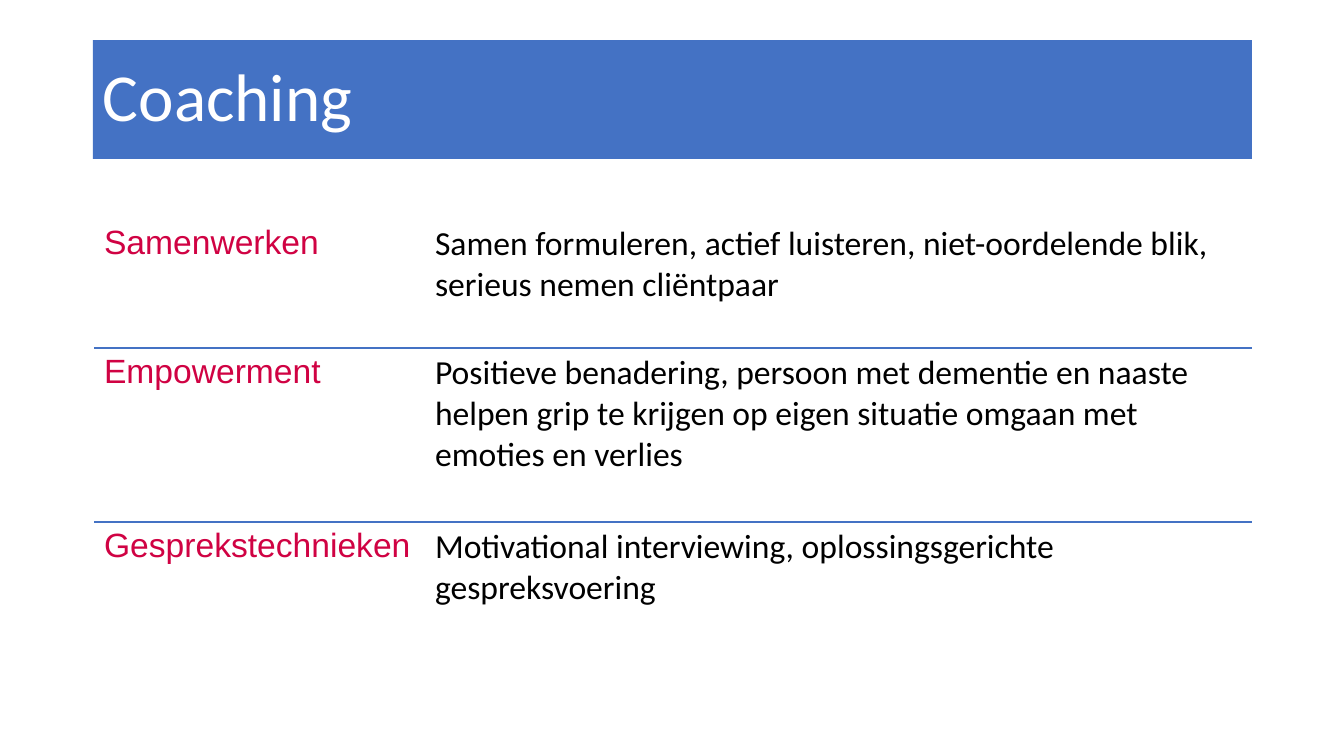
"""Build the slide on coaching: a title bar above a table of three themes."""
import pptx
import pptx.dml.color
import pptx.enum.shapes
import pptx.enum.text
import pptx.oxml
import pptx.oxml.ns
import pptx.util

TITLE = "Coaching"
THEMES = [
    ("Samenwerken",
     "Samen formuleren, actief luisteren, niet-oordelende blik, serieus nemen cliëntpaar"),
    ("Empowerment",
     "Positieve benadering, persoon met dementie en naaste helpen grip te krijgen "
     "op eigen situatie omgaan met emoties en verlies"),
    ("Gesprekstechnieken",
     "Motivational interviewing, oplossingsgerichte gespreksvoering"),
]
BLUE = "4472C4"
TITLE_FORMAT = {"name": "Calibri", "size": pptx.util.Pt(48)}
COLUMN_FORMATS = [
    ({"name": "Arial", "size": pptx.util.Pt(24)}, "D00243"),
    ({"name": "Calibri", "size": pptx.util.Pt(24)}, "000000"),
]

SLIDE_SIZE = (1344, 756)
TITLE_BOX = (93, 40, 1159, 119)
TABLE_LEFT, TABLE_TOP = 94, 219
COLUMN_WIDTHS = [331, 827]
ROW_HEIGHTS = [129, 174, 208]


def px(length):
    return pptx.util.Emu(round(length * 12192000 / 1344))


def color(value):
    return pptx.dml.color.RGBColor.from_string(value)


def write(text_frame, text, font_format, font_color):
    paragraph = text_frame.paragraphs[0]
    run = paragraph.add_run()
    run.text = text
    for name, value in font_format.items():
        setattr(run.font, name, value)
    run.font.color.rgb = color(font_color)
    return paragraph


def set_borders(cell, ruled_sides):
    properties = cell._tc.get_or_add_tcPr()
    for side in "LRTB":
        fill = "<a:noFill/>"
        if side in ruled_sides:
            fill = f'<a:solidFill><a:srgbClr val="{BLUE}"/></a:solidFill>'
        properties.append(pptx.oxml.parse_xml(
            f'<a:ln{side} {pptx.oxml.ns.nsdecls("a")} w="12700">{fill}</a:ln{side}>'))


def add_themes(slide):
    box = (TABLE_LEFT, TABLE_TOP, sum(COLUMN_WIDTHS), sum(ROW_HEIGHTS))
    table = slide.shapes.add_table(
        len(THEMES), len(COLUMN_WIDTHS), *map(px, box)).table
    table.first_row = False
    table.horz_banding = False
    for column, width in zip(table.columns, COLUMN_WIDTHS):
        column.width = px(width)
    for row_index, theme in enumerate(THEMES):
        table.rows[row_index].height = px(ROW_HEIGHTS[row_index])
        ruled_sides = ("T" if row_index > 0 else "") + (
            "B" if row_index < len(THEMES) - 1 else "")
        for column_index, text in enumerate(theme):
            cell = table.cell(row_index, column_index)
            set_borders(cell, ruled_sides)
            cell.fill.background()
            write(cell.text_frame, text, *COLUMN_FORMATS[column_index])


def add_title(slide):
    shape = slide.shapes.add_shape(
        pptx.enum.shapes.MSO_SHAPE.RECTANGLE, *map(px, TITLE_BOX))
    shape.shadow.inherit = False
    shape.fill.solid()
    shape.fill.fore_color.rgb = color(BLUE)
    shape.line.fill.background()
    shape.text_frame.word_wrap = True
    shape.text_frame.vertical_anchor = pptx.enum.text.MSO_ANCHOR.MIDDLE
    paragraph = write(shape.text_frame, TITLE, TITLE_FORMAT, "FFFFFF")
    paragraph.alignment = pptx.enum.text.PP_ALIGN.LEFT
    paragraph.line_spacing = 0.9


def main():
    presentation = pptx.Presentation()
    presentation.slide_width, presentation.slide_height = map(px, SLIDE_SIZE)
    slide = presentation.slides.add_slide(presentation.slide_layouts[6])
    add_themes(slide)
    add_title(slide)
    presentation.save("out.pptx")


if __name__ == "__main__":
    main()
